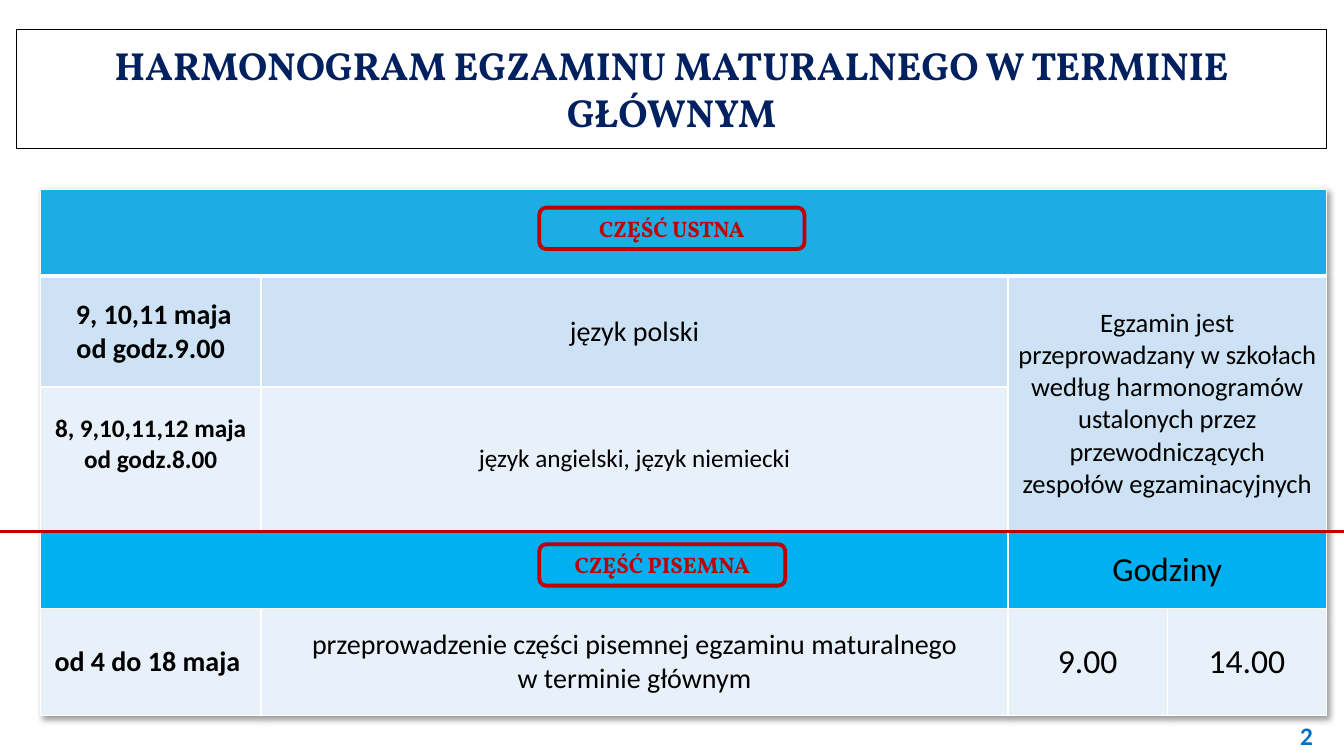
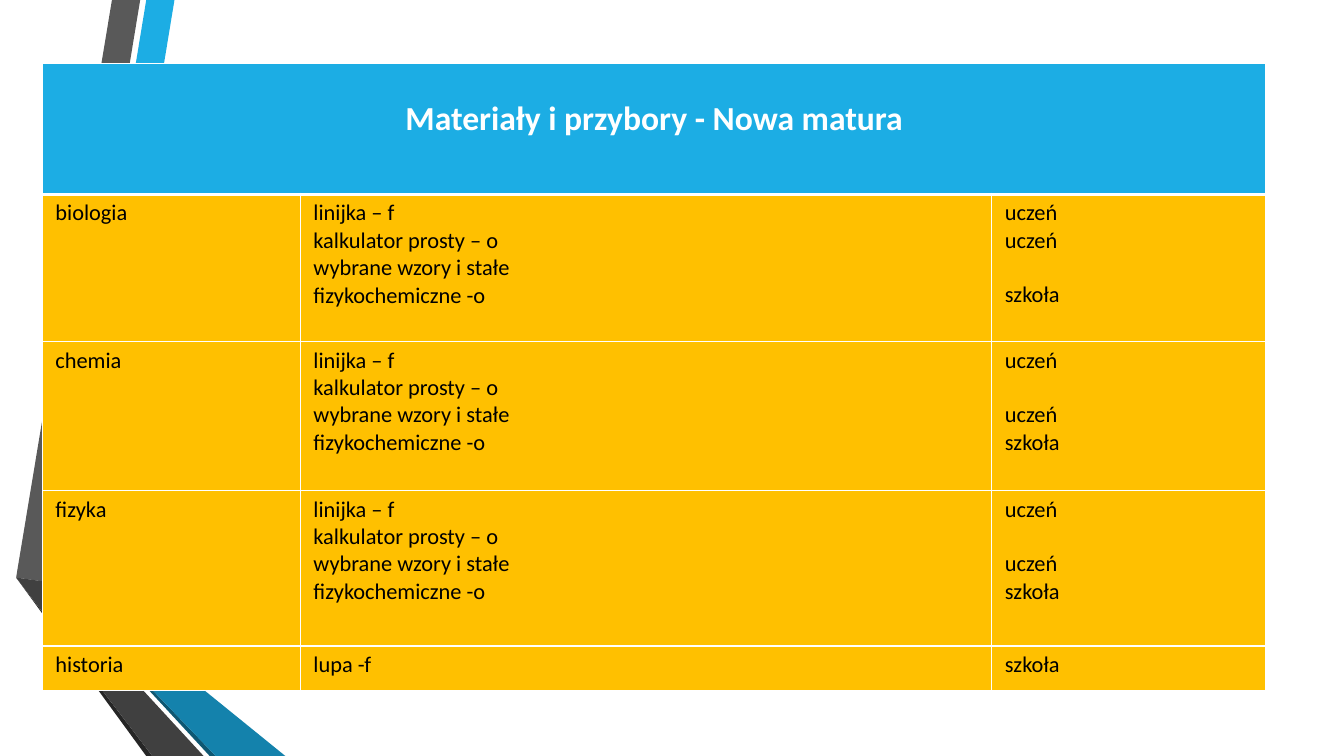
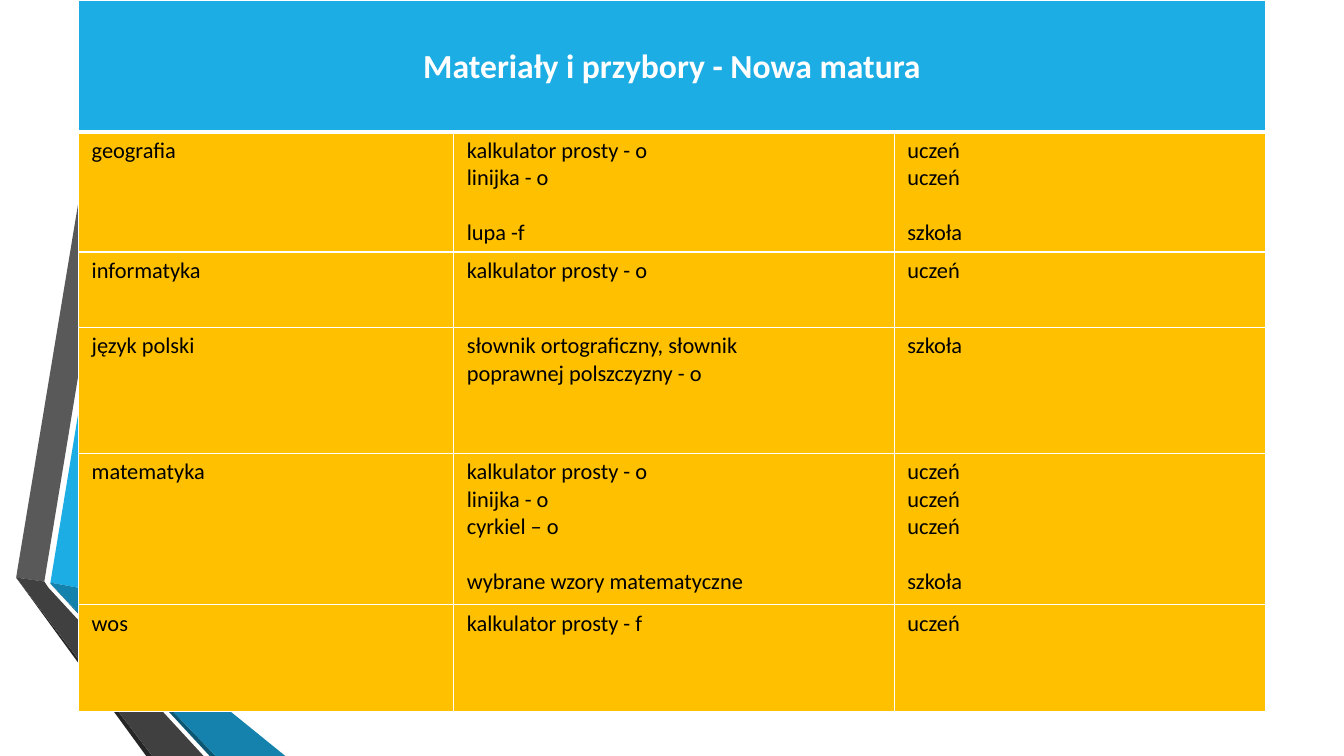
from pptx import Presentation, util as u
from pptx.dml.color import RGBColor
from pptx.enum import shapes, text
from pptx.oxml import parse_xml
from pptx.oxml.ns import nsdecls, qn

WIDE, HIGH = u.Inches(13.33), u.Inches(7.5)
HUE = {
    "white": "FFFFFF", "black": "000000", "navy": "002060", "red": "C00000",
    "blue": "0070C0", "head": "1CADE4", "sky": "00B0F0", "mid": "CDE3F5",
    "pale": "E8F1FA", "gold": "FFC000", "grey": "595959", "dark": "404040",
    "coal": "262626", "teal": "1482AC", "deep": "0E5772",
}
BODY, SERIF = "Calibri", "Vollkorn"
LEFT, MID = text.PP_ALIGN.LEFT, text.PP_ALIGN.CENTER
LINE = 1.22

BANDS = [
    ("head", [(3.75, 77.07), (5.78, 77.73), (12.98, 0), (10.88, 0)]),
    ("grey", [(10.43, 0), (8.33, 0), (1.2, 76.4), (3.3, 76.93)]),
    ("coal", [(1.2, 76.4), (10.88, 100), (11.33, 100)]),
    ("deep", [(3.75, 77.2), (15.6, 100), (16.05, 100)]),
    ("teal", [(3.75, 77.2), (16.05, 100), (21.23, 100), (5.78, 77.73),
              (3.75, 77.07)]),
    ("dark", [(15.15, 100), (3.6, 77.73), (3.3, 76.93), (1.2, 76.4),
              (11.33, 100)]),
]
HEAD = "Materiały i przybory - Nowa matura"
TOOLS = ["linijka – f", "kalkulator prosty – o", "wybrane wzory i stałe",
         "fizykochemiczne -o"]
LATE = ["uczeń", "", "uczeń", "szkoła"]
FIRST = [
    (["biologia"], TOOLS, ["uczeń", "uczeń", "", "szkoła"]),
    (["chemia"], TOOLS, LATE),
    (["fizyka"], TOOLS, LATE),
    (["historia"], ["lupa -f"], ["szkoła"]),
]
SECOND = [
    (["geografia"], ["kalkulator prosty - o", "linijka - o", "", "lupa -f"],
     ["uczeń", "uczeń", "", "szkoła"]),
    (["informatyka"], ["kalkulator prosty - o"], ["uczeń"]),
    (["język polski"],
     ["słownik ortograficzny, słownik", "poprawnej polszczyzny - o"],
     ["szkoła"]),
    (["matematyka"],
     ["kalkulator prosty - o", "linijka - o", "cyrkiel – o", "",
      "wybrane wzory matematyczne"],
     ["uczeń", "uczeń", "uczeń", "", "szkoła"]),
    (["wos"], ["kalkulator prosty - f"], ["uczeń"]),
]


def rgb(name):
    return RGBColor.from_string(HUE[name])


def spot(x, y):
    return round(WIDE * x / 100), round(HIGH * y / 100)


def area(x, y, w, h):
    return spot(x, y) + spot(w, h)


def paint(shape, fill=None, line=None, width=1):
    if fill:
        shape.fill.solid()
        shape.fill.fore_color.rgb = rgb(fill)
    else:
        shape.fill.background()
    if line:
        shape.line.color.rgb = rgb(line)
        shape.line.width = u.Pt(width)
    else:
        shape.line.fill.background()


def write(frame, lines, size, color="black", bold=False, align=LEFT,
          font=BODY):
    frame.word_wrap = True
    gap, fresh = 0, True
    for line in lines:
        if not line:
            gap += size * LINE
            continue
        para = frame.paragraphs[0] if fresh else frame.add_paragraph()
        para.alignment = align
        para.space_before = u.Pt(round(gap, 1))
        run = para.add_run()
        run.text = line
        run.font.name, run.font.size = font, u.Pt(size)
        run.font.bold, run.font.color.rgb = bold, rgb(color)
        gap, fresh = 0, False


def edge(cell, row):
    thick = {"T": 3 if row == 1 else 1, "B": 3 if row == 0 else 1}
    for rank, side in enumerate("LRTB"):
        width = u.Pt(thick.get(side, 1))
        cell.get_or_add_tcPr().insert(rank, parse_xml(
            f'<a:ln{side} {nsdecls("a")} w="{width}"><a:solidFill>'
            f'<a:srgbClr val="{HUE["white"]}"/></a:solidFill></a:ln{side}>'))


def grid(slide, box, cols, rows, fills):
    frame = slide.shapes.add_table(len(rows), len(cols), *area(*box))
    table = frame.table
    table.first_row = table.horz_banding = False
    wide, high = frame.width, frame.height
    for col, part in zip(table.columns, cols):
        col.width = round(wide * part / sum(cols))
    for row, part in zip(table.rows, rows):
        row.height = round(high * part / sum(rows))
    for row, fill in enumerate(fills):
        for col in range(len(cols)):
            cell = table.cell(row, col)
            cell.fill.solid()
            cell.fill.fore_color.rgb = rgb(fill)
    for rank, cell in enumerate(frame.element.iter(qn("a:tc"))):
        edge(cell, rank // len(cols))
    return frame


def shade(frame):
    style = next(frame.element.iter(qn("a:tblPr")))
    style.insert(0, parse_xml(
        f'<a:effectLst {nsdecls("a")}><a:outerShdw blurRad="50800" '
        'dist="38100" dir="2700000" algn="tl"><a:srgbClr val="000000">'
        '<a:alpha val="40000"/></a:srgbClr></a:outerShdw></a:effectLst>'))


def entry(table, row, col, lines, size, bold=False):
    cell = table.cell(row, col)
    cell.vertical_anchor = text.MSO_ANCHOR.MIDDLE
    write(cell.text_frame, lines, size, bold=bold, align=MID)
    return cell


def chip(slide, box, label):
    shape = slide.shapes.add_shape(
        shapes.MSO_SHAPE.FLOWCHART_ALTERNATE_PROCESS, *area(*box))
    shape.shadow.inherit = False
    paint(shape, line="red", width=2.75)
    write(shape.text_frame, [label], 16, "red", True, MID, SERIF)


def rule(slide, y):
    line = slide.shapes.add_connector(
        shapes.MSO_CONNECTOR.STRAIGHT, *spot(0, y), *spot(100, y))
    line.line.color.rgb = rgb("red")
    line.line.width = u.Pt(2)
    line.element.spPr.append(parse_xml(f'<a:effectLst {nsdecls("a")}/>'))


def bands(slide):
    for color, points in BANDS:
        start, *rest = [spot(*point) for point in points]
        maker = slide.shapes.build_freeform(*start)
        maker.add_line_segments(rest)
        shape = maker.convert_to_shape()
        shape.shadow.inherit = False
        paint(shape, color)


def title(slide, label):
    shape = slide.shapes.title
    shape.left, shape.top, shape.width, shape.height = area(
        1.2, 3.87, 97.5, 15.73)
    paint(shape, "white", "black", 0.75)
    frame = shape.text_frame
    frame.auto_size = text.MSO_AUTO_SIZE.NONE
    frame.vertical_anchor = text.MSO_ANCHOR.MIDDLE
    write(frame, [label], 28, "navy", True, MID, SERIF)


def number(slide, label):
    box = slide.shapes.add_textbox(*area(96, 94.67, 4, 5.33))
    write(box.text_frame, [label], 18, "blue", True)


def dates(slide):
    title(slide, "HARMONOGRAM EGZAMINU MATURALNEGO W TERMINIE GŁÓWNYM")
    frame = grid(slide, (3, 25.07, 95.7, 69.6), [2.19, 7.41, 1.58, 1.58],
                 [0.86, 1.1, 1.43, 0.77, 1.06],
                 ["head", "mid", "pale", "sky", "pale"])
    shade(frame)
    table = frame.table
    for top, left, low, right in [(0, 0, 0, 3), (1, 2, 2, 3), (3, 0, 3, 1),
                                  (3, 2, 3, 3)]:
        table.cell(top, left).merge(table.cell(low, right))
    note = entry(table, 1, 2, [
        "Egzamin jest przeprowadzany w szkołach według harmonogramów "
        "ustalonych przez przewodniczących zespołów egzaminacyjnych"], 19)
    note.fill.fore_color.rgb = rgb("mid")
    entry(table, 1, 0, [" 9, 10,11 maja", "od godz.9.00"], 20, True)
    entry(table, 1, 1, ["język polski"], 20)
    days = entry(table, 2, 0, ["8, 9,10,11,12 maja", "od godz.8.00"], 18, True)
    days.margin_bottom = u.Inches(0.35)
    entry(table, 2, 1, ["język angielski, język niemiecki"], 18)
    entry(table, 3, 2, ["Godziny"], 24)
    entry(table, 4, 0, ["od 4 do 18 maja "], 20, True)
    entry(table, 4, 1, ["przeprowadzenie części pisemnej egzaminu maturalnego",
                        "w terminie głównym"], 20)
    entry(table, 4, 2, ["9.00"], 24)
    entry(table, 4, 3, ["14.00"], 24)
    number(slide, "2")
    rule(slide, 70.27)
    chip(slide, (40.13, 27.47, 19.73, 5.47), "CZĘŚĆ USTNA")
    chip(slide, (40.13, 72, 18.3, 5.47), "CZĘŚĆ PISEMNA")


def needs(slide, box, cols, rows, drop, items):
    bands(slide)
    table = grid(slide, box, cols, rows,
                 ["head"] + ["gold"] * len(items)).table
    head = table.cell(0, 0)
    head.merge(table.cell(0, len(cols) - 1))
    head.margin_top = u.Inches(drop)
    write(head.text_frame, [HEAD], 24, "white", True, MID)
    for row, item in enumerate(items, 1):
        for col, lines in enumerate(item):
            cell = table.cell(row, col)
            cell.margin_left = cell.margin_right = u.Inches(0.13)
            write(cell.text_frame, lines, 16)


def main():
    deck = Presentation()
    deck.slide_width, deck.slide_height = WIDE, HIGH
    titled, blank = deck.slide_layouts[5], deck.slide_layouts[6]
    dates(deck.slides.add_slide(titled))
    needs(deck.slides.add_slide(blank), (3.15, 8.4, 91.05, 82.93),
          [2.56, 6.86, 2.72], [1.3, 1.46, 1.48, 1.54, 0.44], 0.35, FIRST)
    needs(deck.slides.add_slide(blank), (5.85, 0, 88.3, 94.13),
          [3.72, 4.37, 3.68], [1.31, 1.19, 0.75, 1.25, 1.5, 1.06], 0.46,
          SECOND)
    deck.save("out.pptx")


if __name__ == "__main__":
    main()
